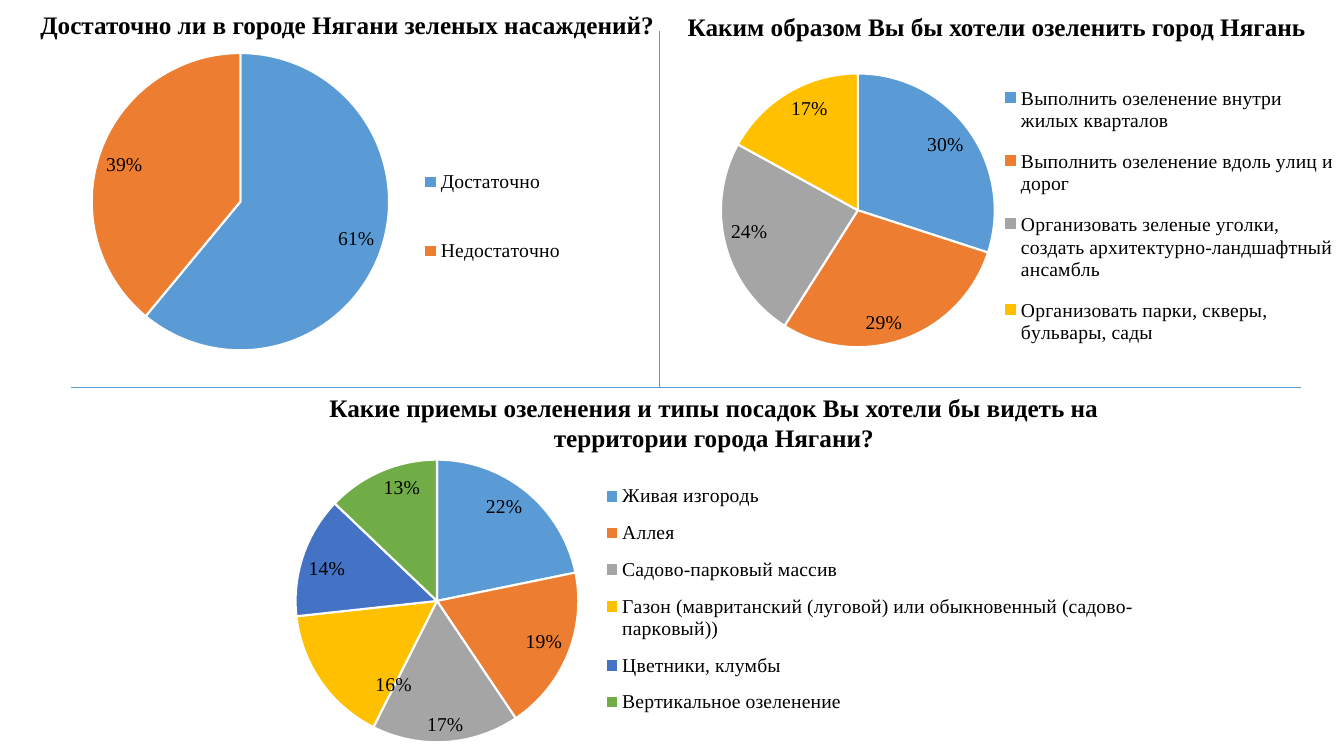
import pptx
import pptx.chart.data
import pptx.dml.color
import pptx.enum.chart
import pptx.enum.shapes
import pptx.enum.text
import pptx.oxml
import pptx.oxml.ns
import pptx.util

WIDTH, HEIGHT = pptx.util.Inches(13.33), pptx.util.Inches(7.5)
BLACK, WHITE, BLUE = "000000", "FFFFFF", "5B9BD5"
SLICES = [BLUE, "ED7D31", "A5A5A5", "FFC000", "4472C4", "70AD47"]
qn = pptx.oxml.ns.qn


def rgb(value):
    return pptx.dml.color.RGBColor.from_string(value)


def assign(target, values):
    for key, value in values.items():
        setattr(target, key, value)


def manual_layout(modes, **shares):
    ns = pptx.oxml.ns.nsdecls("c")
    parts = [f'<c:{key} val="{value}"/>' for key, value in (modes | shares).items()]
    return pptx.oxml.parse_xml(
        f'<c:layout {ns}><c:manualLayout>{"".join(parts)}</c:manualLayout></c:layout>')


class SurveySlide:
    """Draws survey headings, dividers and pies placed in percent of the slide."""

    heading = {"name": "Times New Roman", "size": pptx.util.Pt(18), "bold": True}
    label = {"name": "Times New Roman", "size": pptx.util.Pt(14), "bold": False}
    base = {"name": "Calibri", "size": pptx.util.Pt(10)}
    frame = {"word_wrap": True, "auto_size": pptx.enum.text.MSO_AUTO_SIZE.NONE,
             "vertical_anchor": pptx.enum.text.MSO_ANCHOR.TOP}
    edge = {"xMode": "edge", "yMode": "edge"}

    def __init__(self, slide):
        self.slide = slide

    def place(self, left, top, width, height):
        return [round(WIDTH * left / 100), round(HEIGHT * top / 100),
                round(WIDTH * width / 100), round(HEIGHT * height / 100)]

    def style(self, font, values):
        assign(font, values)
        font.color.rgb = rgb(BLACK)

    def question(self, wording, area, box=None):
        spot = self.place(*area)
        box = box or self.slide.shapes.add_textbox(*spot)
        assign(box, dict(zip(("left", "top", "width", "height"), spot)))
        assign(box.text_frame, self.frame)
        paragraph = box.text_frame.paragraphs[0]
        assign(paragraph, {"text": wording, "line_spacing": 1.0,
                           "alignment": pptx.enum.text.PP_ALIGN.CENTER})
        self.style(paragraph.runs[0].font, self.heading)

    def divider(self, *ends):
        rule = self.slide.shapes.add_connector(
            pptx.enum.shapes.MSO_CONNECTOR.STRAIGHT, *self.place(*ends))
        rule.line.color.rgb = rgb(BLUE)
        rule.line.width = pptx.util.Pt(0.5)
        properties = rule._element.spPr
        properties.append(properties.makeelement(qn("a:effectLst"), {}))

    def pie(self, area, answers, plot_share, legend_share):
        data = pptx.chart.data.CategoryChartData()
        data.categories = list(answers)
        data.add_series("Series 1", list(answers.values()))
        chart = self.slide.shapes.add_chart(
            pptx.enum.chart.XL_CHART_TYPE.PIE, *self.place(*area), data).chart
        assign(chart, {"has_title": False, "has_legend": True})
        self.style(chart.font, self.base)
        self.style(chart.legend.font, self.label)
        assign(chart.legend, {"position": pptx.enum.chart.XL_LEGEND_POSITION.RIGHT,
                              "include_in_layout": False})
        plot = chart.plots[0]
        plot.vary_by_categories = True
        shares = plot.series[0]
        for index in range(len(answers)):
            form = shares.points[index].format
            form.fill.solid()
            form.fill.fore_color.rgb = rgb(SLICES[index])
            form.line.color.rgb = rgb(WHITE)
            form.line.width = pptx.util.Pt(1.5)
        assign(shares.data_labels, {
            "show_value": False, "show_percentage": True, "show_legend_key": False,
            "number_format": "0%", "number_format_is_linked": False,
            "position": pptx.enum.chart.XL_LABEL_POSITION.INSIDE_END})
        self.style(shares.data_labels.font, self.label)
        plot_area = chart._chartSpace.chart.plotArea
        legend = chart.legend._element
        for part in (plot_area, legend):
            for old in part.findall(qn("c:layout")):
                part.remove(old)
        names = ("x", "y", "w", "h")
        plot_area.insert(0, manual_layout(
            {"layoutTarget": "inner"} | self.edge, **dict(zip(names, plot_share))))
        legend.find(qn("c:legendPos")).addnext(
            manual_layout(self.edge, **dict(zip(names, legend_share))))
        return shares

    def shift_label(self, shares, index, x, y):
        tag = shares.points[index].data_label
        self.style(tag.font, self.label)
        tag.position = pptx.enum.chart.XL_LABEL_POSITION.INSIDE_END
        element = tag._get_or_add_dLbl()
        element.find(qn("c:showVal")).set("val", "0")
        element.find(qn("c:showPercent")).set("val", "1")
        element.find(qn("c:idx")).addnext(manual_layout({}, x=x, y=y))


def main():
    deck = pptx.Presentation()
    assign(deck, {"slide_width": WIDTH, "slide_height": HEIGHT})
    slide = deck.slides.add_slide(deck.slide_layouts[5])
    survey = SurveySlide(slide)

    survey.question("Достаточно ли в городе Нягани зеленых насаждений?",
                    (-1.05, 0.53, 53.79, 5.33), slide.shapes.title)
    survey.question("Каким образом Вы бы хотели озеленить город Нягань",
                    (49.14, 0.8, 50.04, 5.33))
    survey.divider(49.06, 4.13, 49.06, 51.2)
    survey.divider(5.25, 51.2, 96.77, 51.2)
    survey.question("Какие приемы озеленения и типы посадок Вы хотели бы видеть "
                    "на территории города Нягани?", (22.58, 51.2, 61.07, 9.47))

    survey.pie((4.95, 4.67, 37.51, 43.6), {"Достаточно": 61, "Недостаточно": 39},
               (0.05, 0.05, 0.59, 0.91), (0.69, 0.27, 0.31, 0.56))
    survey.pie((49.06, 4.4, 50.94, 46.4), {
        "Выполнить озеленение внутри жилых кварталов": 30,
        "Выполнить озеленение вдоль улиц и дорог": 29,
        "Организовать зеленые уголки, создать архитектурно-ландшафтный ансамбль": 24,
        "Организовать парки, скверы, бульвары, сады": 17,
    }, (0.09, 0.11, 0.4, 0.79), (0.51, 0.1, 0.49, 0.84))
    plantings = survey.pie((12.15, 55.6, 74.04, 47.33), {
        "Живая изгородь": 22,
        "Аллея": 19,
        "Садово-парковый массив": 17,
        "Газон (мавританский (луговой) или обыкновенный (садово-парковый))": 16,
        "Цветники, клумбы": 14,
        "Вертикальное озеленение": 13,
    }, (0.13, 0.11, 0.29, 0.79), (0.44, 0.14, 0.54, 0.72))
    survey.shift_label(plantings, 3, 0.05, 0.05)
    deck.save("out.pptx")


if __name__ == "__main__":
    main()
